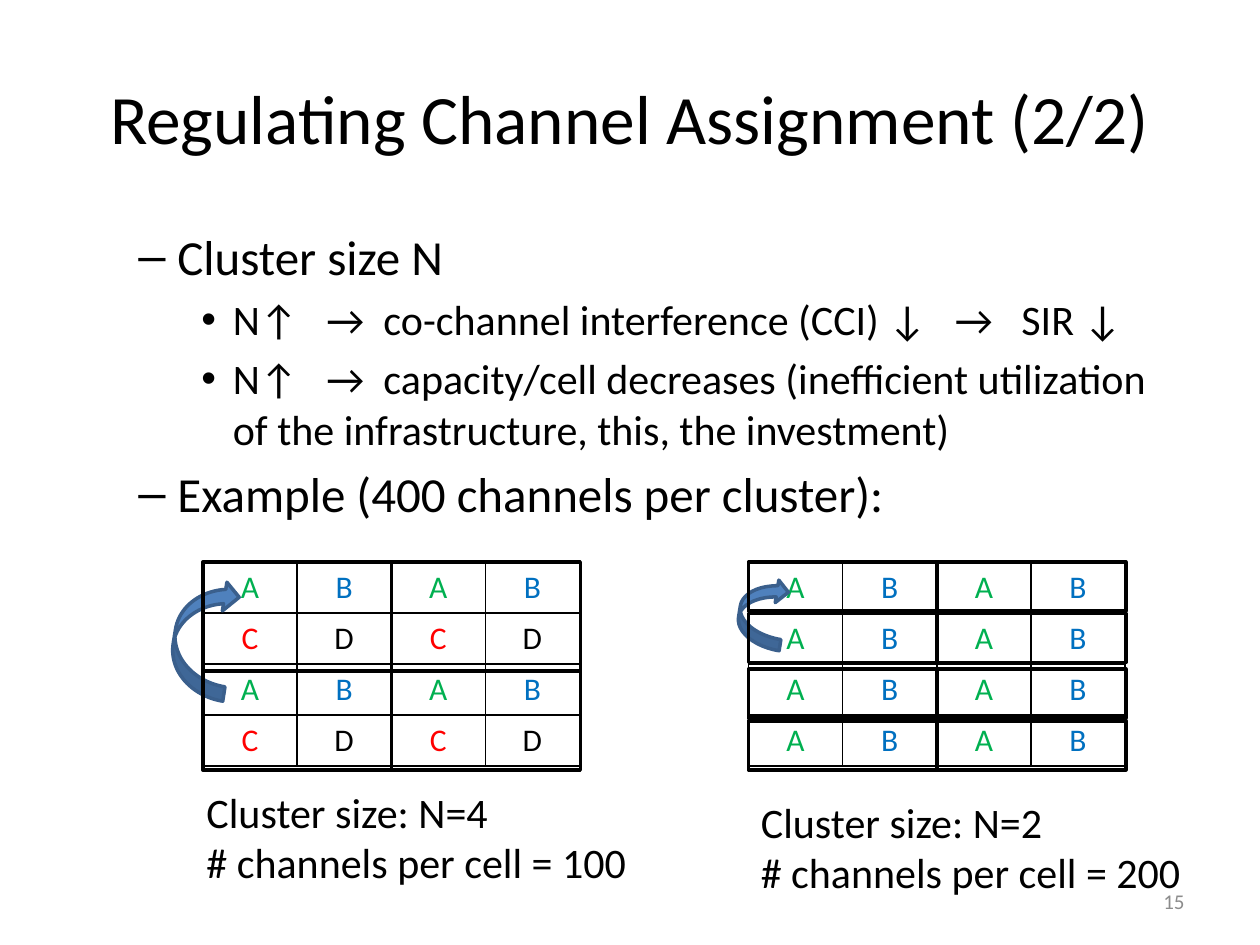
from dataclasses import dataclass

from lxml import etree
from pptx import Presentation
from pptx.dml.color import RGBColor
from pptx.enum.shapes import MSO_SHAPE
from pptx.enum.text import MSO_ANCHOR, PP_ALIGN
from pptx.oxml.ns import qn
from pptx.util import Inches, Pt

CURVED_ARROW, RECTANGLE = MSO_SHAPE.CURVED_DOWN_ARROW, MSO_SHAPE.RECTANGLE
TOP, MIDDLE = MSO_ANCHOR.TOP, MSO_ANCHOR.MIDDLE
LEFT, CENTER, RIGHT = PP_ALIGN.LEFT, PP_ALIGN.CENTER, PP_ALIGN.RIGHT

WIDTH, HEIGHT = Inches(10), Inches(7.5)
FONT = "Calibri"
COLORS = {"text": "000000", "number": "8C8C8C", "border": "000000",
          "arrow": "4F81BD", "arrow_edge": "3A5F8C",
          "A": "00B050", "B": "0070C0", "C": "FF0000", "D": "000000"}

# Bullet level: character, left margin and hanging indent in inches, text size
LEVELS = {1: ("–", 0.81, 0.31, 28), 2: ("•", 1.25, 0.25, 24)}
BULLETS = [
    (1, "Cluster size N"),
    (2, "N↑   →  co-channel interference (CCI) ↓   →   SIR ↓"),
    (2, "N↑   →  capacity/cell decreases (inefficient utilization "
        "of the infrastructure, this, the investment)"),
    (1, "Example (400 channels per cluster):"),
]


@dataclass
class Box:
    """An area measured in percent of the slide's width and height."""
    left: float
    top: float
    width: float
    height: float

    def inner(self, left, top, width, height):
        """The area inside this one, given in percent of it."""
        return Box(self.left + self.width * left / 100,
                   self.top + self.height * top / 100,
                   self.width * width / 100, self.height * height / 100)

    def lengths(self):
        return [round(share * side / 100) for share, side in
                zip((self.left, self.top, self.width, self.height),
                    (WIDTH, HEIGHT, WIDTH, HEIGHT))]


# Each example: table area, letters of its rows, cluster bands as (top, height)
# in percent of the outlined area, arrow area, caption area, caption lines
EXAMPLES = [
    (Box(16.1, 59.47, 29.9, 21.6), ["ABAB", "CDCD"] * 2,
     [(0, 52.5), (52.3, 47.7)], Box(11.4, 64.4, 9.5, 6.13),
     Box(15.4, 82.53, 36.2, 12.53),
     ["Cluster size: N=4", "# channels per cell = 100"]),
    (Box(59.4, 59.47, 29.9, 21.6), ["ABAB"] * 4,
     [(top, 23.6) for top in (0, 24.8, 51.5, 76.4)], Box(57.7, 62.4, 5.6, 4.8),
     Box(59.4, 83.6, 36.2, 12.53),
     ["Cluster size: N=2", "# channels per cell = 200"]),
]


def rgb(name):
    return RGBColor.from_string(COLORS[name])


def write(para, text, size, color="text", align=LEFT):
    para.alignment = align
    span = para.add_run()
    span.text = text
    for name, value in {"name": FONT, "size": Pt(size)}.items():
        setattr(span.font, name, value)
    span.font.color.rgb = rgb(color)


def add_frame(page, box, anchor=TOP):
    frame = page.shapes.add_textbox(*box.lengths()).text_frame
    for name, value in {"word_wrap": True, "vertical_anchor": anchor}.items():
        setattr(frame, name, value)
    return frame


def paragraphs(frame, count):
    return [frame.paragraphs[0]] + [frame.add_paragraph() for _ in range(count - 1)]


def add_line(page, box, text, size, color, align):
    write(add_frame(page, box, MIDDLE).paragraphs[0], text, size, color, align)


def set_bullet(para, mark, margin, indent):
    properties = para._p.get_or_add_pPr()
    properties.set("marL", str(Inches(margin)))
    properties.set("indent", str(-Inches(indent)))
    spacing = etree.SubElement(properties, qn("a:spcBef"))
    etree.SubElement(spacing, qn("a:spcPct"), val="20000")
    etree.SubElement(properties, qn("a:buFont"), typeface="Arial")
    etree.SubElement(properties, qn("a:buChar"), char=mark)


def add_bullets(page, box):
    paras = paragraphs(add_frame(page, box), len(BULLETS))
    for para, (level, text) in zip(paras, BULLETS):
        mark, margin, indent, size = LEVELS[level]
        write(para, text, size)
        set_bullet(para, mark, margin, indent)


def set_borders(cell):
    properties = cell._tc.get_or_add_tcPr()
    for side in ("lnL", "lnR", "lnT", "lnB"):
        line = etree.SubElement(properties, qn(f"a:{side}"), w=str(Pt(1)))
        fill = etree.SubElement(line, qn("a:solidFill"))
        etree.SubElement(fill, qn("a:srgbClr"), val=COLORS["border"])


def add_cells(page, box, rows):
    table = page.shapes.add_table(len(rows), len(rows[0]), *box.lengths()).table
    for name in ("first_row", "horz_banding"):
        setattr(table, name, False)
    for row, letters in enumerate(rows):
        for column, letter in enumerate(letters):
            cell = table.cell(row, column)
            write(cell.text_frame.paragraphs[0], letter, 18, letter, CENTER)
            set_borders(cell)
            cell.fill.background()


def add_outlined(page, kind, box, color):
    shape = page.shapes.add_shape(kind, *box.lengths())
    shape.shadow.inherit = False
    shape.fill.background()
    shape.line.color.rgb = rgb(color)
    shape.line.width = Pt(2)
    return shape


def add_reuse_arrow(page, box):
    arrow = add_outlined(page, CURVED_ARROW, box, "arrow_edge")
    arrow.rotation = 279
    arrow.fill.solid()
    arrow.fill.fore_color.rgb = rgb("arrow")


def add_clusters(page, box, bands):
    """Outline the clusters, two side by side in each band."""
    for top, height in bands:
        for left in (0, 50):
            add_outlined(page, RECTANGLE, box.inner(left, top, 50, height), "border")


def add_example(page, cells, rows, bands, arrow, caption, lines):
    add_cells(page, cells, rows)
    frame = add_frame(page, caption)
    for para, text in zip(paragraphs(frame, len(lines)), lines):
        write(para, text, 24)
    add_reuse_arrow(page, arrow)
    add_clusters(page, cells.inner(0, 0, 100.2, 101.9), bands)


def main():
    deck = Presentation()
    deck.slide_width, deck.slide_height = WIDTH, HEIGHT
    page = deck.slides.add_slide(deck.slide_layouts[6])
    add_line(page, Box(5, 4, 90, 16.67), "Regulating Channel Assignment (2/2)",
             39.6, "text", CENTER)
    add_bullets(page, Box(5, 23.33, 90, 73.87))
    for example in EXAMPLES:
        add_example(page, *example)
    add_line(page, Box(71.7, 92.67, 23.3, 5.33), "15", 12, "number", RIGHT)
    deck.save("out.pptx")


if __name__ == "__main__":
    main()
